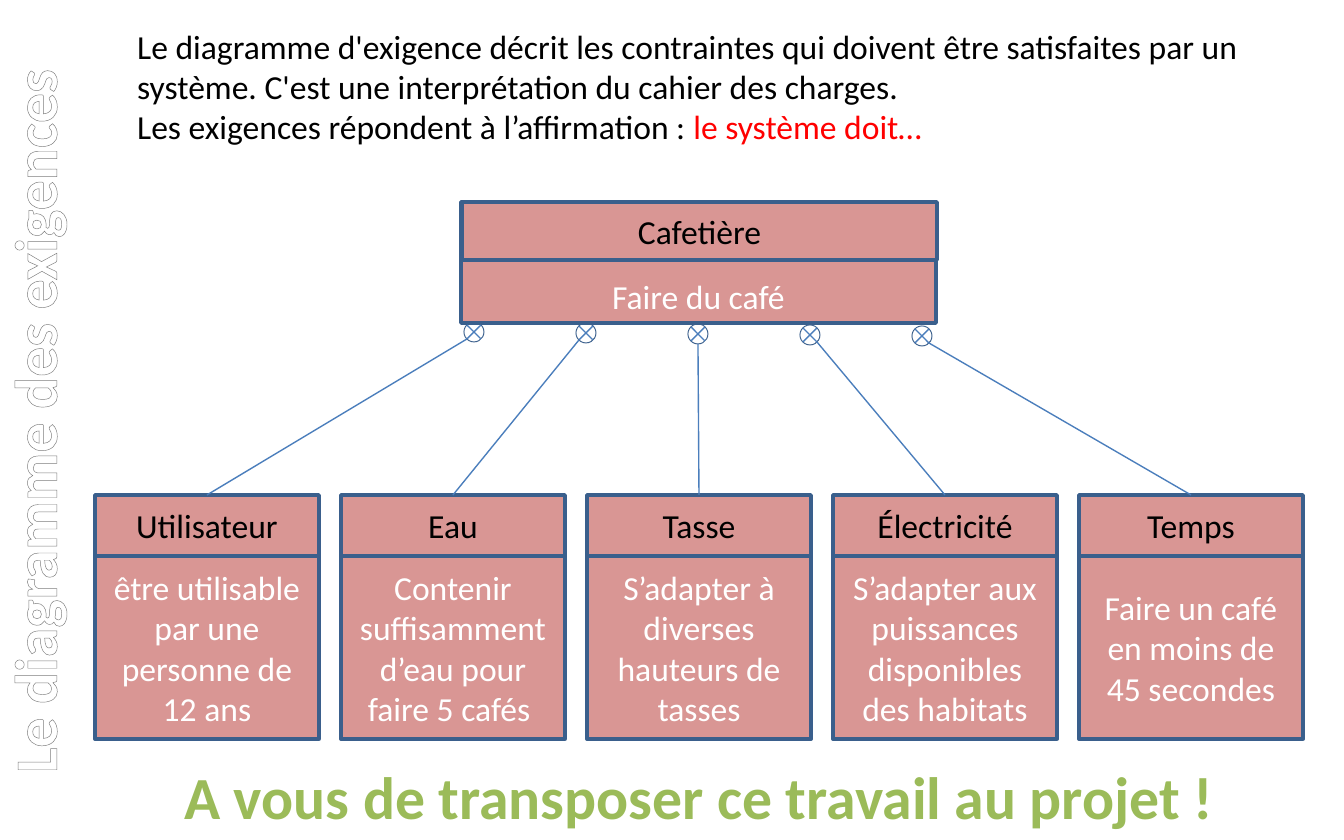
from lxml.etree import SubElement
from pptx import Presentation
from pptx.dml.color import RGBColor
from pptx.enum.shapes import MSO_CONNECTOR, MSO_SHAPE
from pptx.enum.text import MSO_ANCHOR, MSO_AUTO_SIZE, PP_ALIGN
from pptx.oxml import parse_xml
from pptx.oxml.ns import nsdecls, qn
from pptx.util import Emu, Pt

# Content
TITLE = "Le diagramme des exigences"
INTRO = [
    [("Le diagramme d'exigence décrit les contraintes qui doivent être satisfaites "
      "par un système. C'est une interprétation du cahier des charges.", "000000")],
    [("Les exigences répondent à l’affirmation : ", "000000"),
     ("le système doit…", "FF0000")],
]
SYSTEM = ("Cafetière", "Faire du café")
REQUIREMENTS = [
    ("Utilisateur", "être utilisable par une personne de 12 ans"),
    ("Eau", "Contenir suffisamment d’eau pour faire 5 cafés "),
    ("Tasse", "S’adapter à diverses hauteurs de tasses"),
    ("Électricité", "S’adapter aux puissances disponibles des habitats"),
    ("Temps", "Faire un café en moins de 45 secondes"),
]
CLOSING = "A vous de transposer ce travail au projet !"

# Format, lengths in px
WIDTH, HEIGHT = 1344, 840
SCALE = 9144000 / WIDTH
PINK, BORDER, LINK = "D99694", "3A5F8C", "4B7EBC"
BLACK, WHITE, GREEN = "000000", "FFFFFF", "9BBB59"
TITLE_STOPS = [(0, WHITE), (9, WHITE), (50, "7F7F7F"), (79, WHITE), (100, WHITE)]
BOX_LEFT, BOX_TOP, BOX_STEP, BOX_WIDTH = 95, 495, 246, 224
HEAD_HEIGHT, BODY_HEIGHT = 61, 183
MARK_X, MARK_Y, MARK_STEP, MARK_SIZE, CROSS = 474, 332, 112, 20, 7
LINK_ENDS = [(-7, 7), (-7, 7), (0, 10), (7, 7), (7, 7)]


def px(*lengths):
    return [Emu(round(length * SCALE)) for length in lengths]


def rgb(color):
    return RGBColor.from_string(color)


def write(frame, paragraphs, align, anchor, size=18, bold=False):
    settings = {"word_wrap": True, "vertical_anchor": anchor}
    for name, value in settings.items():
        setattr(frame, name, value)
    for i, runs in enumerate(paragraphs):
        paragraph = frame.add_paragraph() if i else frame.paragraphs[0]
        paragraph.alignment = align
        for text, color in runs:
            run = paragraph.add_run()
            run.text = text
            font = {"name": "Calibri", "size": Pt(size), "bold": bold}
            for name, value in font.items():
                setattr(run.font, name, value)
            run.font.color.rgb = rgb(color)
    return frame


def text_box(area, paragraphs, align, anchor=MSO_ANCHOR.TOP, **font):
    box = slide.shapes.add_textbox(*px(*area))
    write(box.text_frame, paragraphs, align, anchor, **font)
    box.text_frame.auto_size = MSO_AUTO_SIZE.SHAPE_TO_FIT_TEXT
    return box


def outline(box, color, width):
    properties = box.text_frame.paragraphs[0].runs[0].font._element
    properties.insert(0, parse_xml(
        f'<a:ln {nsdecls("a")} w="{Pt(width)}"><a:solidFill>'
        f'<a:srgbClr val="{color}"/></a:solidFill></a:ln>'))
    return properties


def box(area, text, color, anchor=MSO_ANCHOR.MIDDLE):
    rect = slide.shapes.add_shape(MSO_SHAPE.RECTANGLE, *px(*area))
    rect.shadow.inherit = False
    rect.fill.solid()
    rect.fill.fore_color.rgb = rgb(PINK)
    rect.line.color.rgb = rgb(BORDER)
    rect.line.width = Pt(2)
    write(rect.text_frame, [[(text, color)]], PP_ALIGN.CENTER, anchor)


def line(shapes, *ends):
    connector = shapes.add_connector(MSO_CONNECTOR.STRAIGHT, *px(*ends))
    connector.line.color.rgb = rgb(LINK)
    connector.line.width = Pt(0.75)
    SubElement(connector._element.spPr, qn("a:effectLst"))


def containment_mark(x, y):
    shapes = slide.shapes.add_group_shape().shapes
    half = MARK_SIZE / 2
    circle = shapes.add_shape(
        MSO_SHAPE.OVAL, *px(x - half, y - half, MARK_SIZE, MARK_SIZE))
    circle.shadow.inherit = False
    circle.fill.background()
    circle.line.color.rgb = rgb(BORDER)
    circle.line.width = Pt(0.5)
    for side in (-CROSS, CROSS):
        line(shapes, x + side, y - CROSS, x - side, y + CROSS)


presentation = Presentation()
presentation.slide_width, presentation.slide_height = px(WIDTH, HEIGHT)
slide = presentation.slides.add_slide(presentation.slide_layouts[6])

# Vertical title with gradient letters
title = text_box((-387, 378, 840, 86), [[(TITLE, WHITE)]], PP_ALIGN.CENTER,
                 MSO_ANCHOR.MIDDLE, size=32, bold=True)
title.rotation = 270
letters = outline(title, "7D7D7D", 0.83)
stops = "".join(f'<a:gs pos="{at * 1000}"><a:srgbClr val="{color}"/></a:gs>'
                for at, color in TITLE_STOPS)
letters.replace(letters.find(qn("a:solidFill")), parse_xml(
    f'<a:gradFill {nsdecls("a")}><a:gsLst>{stops}</a:gsLst>'
    '<a:lin ang="5400000" scaled="0"/></a:gradFill>'))

# Introduction
text_box((124, 19, 1183, 136), INTRO, PP_ALIGN.LEFT)

# System
name, purpose = SYSTEM
box((461, 202, 475, 121), purpose, WHITE, MSO_ANCHOR.BOTTOM)
box((462, 202, 475, 58), name, BLACK)

# Requirements, each linked to its mark under the system
for i, ((name, need), (dx, dy)) in enumerate(zip(REQUIREMENTS, LINK_ENDS)):
    left = BOX_LEFT + i * BOX_STEP
    mark_x, mark_y = MARK_X + i * MARK_STEP, MARK_Y + i
    box((left, BOX_TOP + HEAD_HEIGHT, BOX_WIDTH, BODY_HEIGHT), need, WHITE)
    box((left, BOX_TOP, BOX_WIDTH, HEAD_HEIGHT), name, BLACK)
    containment_mark(mark_x, mark_y)
    line(slide.shapes, left + BOX_WIDTH / 2, BOX_TOP, mark_x + dx, mark_y + dy)

# Closing call
closing = text_box((137, 753, 1125, 86), [[(CLOSING, GREEN)]], PP_ALIGN.CENTER,
                   size=32, bold=True)
outline(closing, "FEFEFE", 1.5)

presentation.save("out.pptx")
